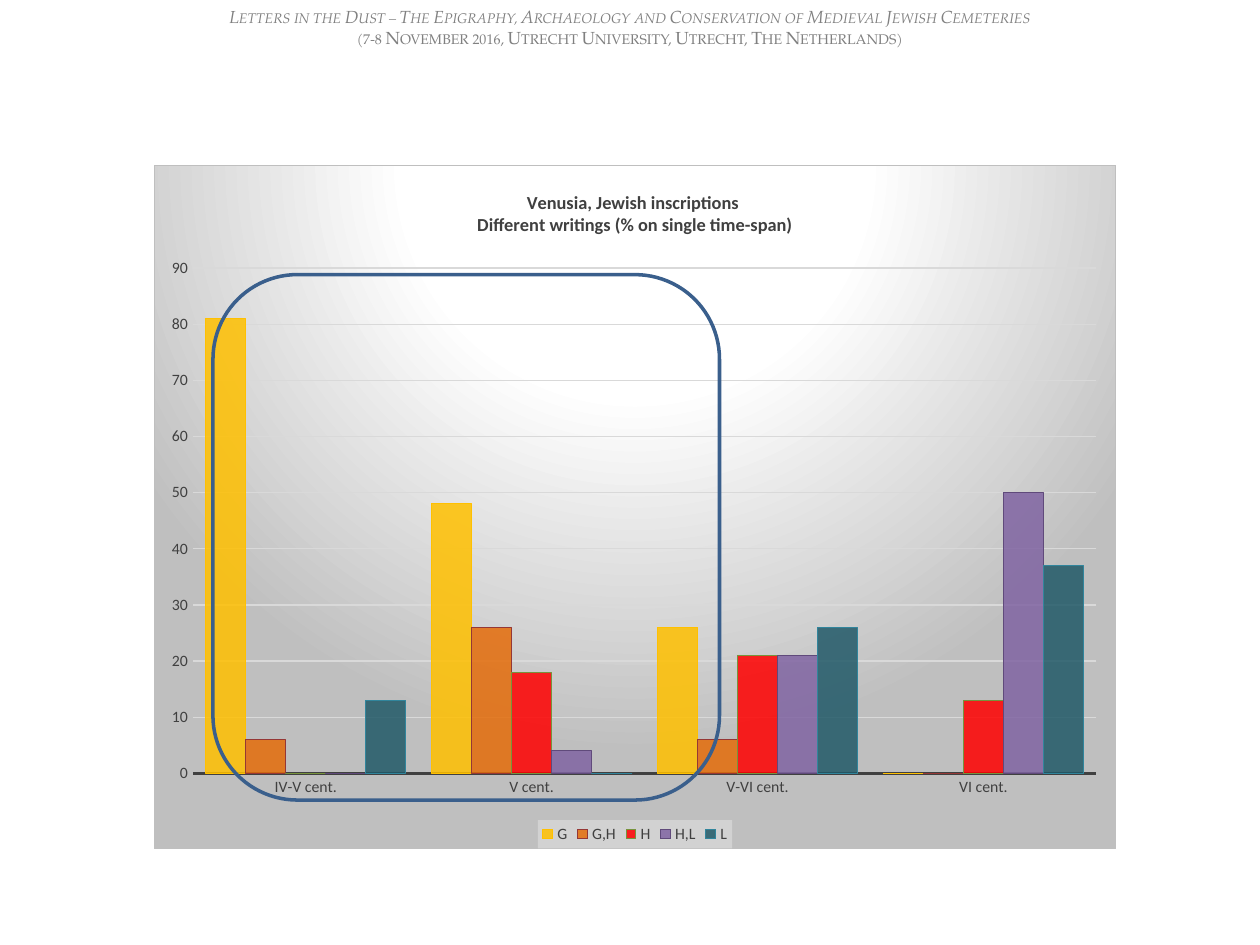
from dataclasses import dataclass

from pptx import Presentation
from pptx import util as u
from pptx.chart import data as cd
from pptx.dml.color import RGBColor
from pptx.enum import chart as ch, shapes, text
from pptx.oxml import parse_xml
from pptx.oxml.ns import nsdecls


@dataclass(frozen=True)
class Theme:
    serif: str = "TeX Gyre Pagella"
    sans: str = "Calibri"
    head: str = "808080"
    ink: str = "404040"
    grid: str = "D9D9D9"
    edge: str = "BFBFBF"
    frame: str = "3A5F8C"
    head_size: float = 10
    title_size: float = 10.5
    label_size: float = 9
    alpha: int = 85


THEME = Theme()

HEADER = [
    ("Letters in the Dust – The Epigraphy, Archaeology and Conservation "
     "of Medieval Jewish Cemeteries", True),
    ("(7-8 November 2016, Utrecht University, Utrecht, The Netherlands)", False),
]
TITLE = ["Venusia, Jewish inscriptions ", "Different writings (% on single time-span)"]
SPANS = ["IV-V cent.", "V cent.", "V-VI cent.", "VI cent."]
# name, values, fill, outline
SCRIPTS = [
    ("G", (81, 48, 26, 0), "FFC000", "FFC000"),
    ("G,H", (6, 26, 6, 0), "E46C0A", "953735"),
    ("H", (0, 18, 21, 13), "FF0000", "77933C"),
    ("H,L", (0, 4, 21, 50), "8064A2", "604A7B"),
    ("L", (13, 0, 26, 37), "215968", "31859C"),
]


def box(*sides):
    return [u.Inches(side) for side in sides]


def set_font(font, size, color, face, bold=False, italic=False):
    font.size, font.name = u.Pt(size), face
    font.bold, font.italic = bold, italic
    font.color.rgb = RGBColor.from_string(color)


def set_label(font):
    set_font(font, THEME.label_size, THEME.ink, THEME.sans)


def set_line(line, color, width):
    line.color.rgb = RGBColor.from_string(color)
    line.width = u.Pt(width)


def add_header(slide):
    frame = slide.shapes.add_textbox(*box(0, 0, 10, 0.44)).text_frame
    frame.word_wrap = True
    frame.auto_size = text.MSO_AUTO_SIZE.SHAPE_TO_FIT_TEXT
    for i, (words, italic) in enumerate(HEADER):
        para = frame.add_paragraph() if i else frame.paragraphs[0]
        para.alignment = text.PP_ALIGN.CENTER
        run = para.add_run()
        run.text = words
        set_font(run.font, THEME.head_size, THEME.head, THEME.serif, italic=italic)
        run.font._element.set("cap", "small")


def set_title(chart):
    frame = chart.chart_title.text_frame
    for i, words in enumerate(TITLE):
        para = frame.add_paragraph() if i else frame.paragraphs[0]
        run = para.add_run()
        run.text = words
        set_font(run.font, THEME.title_size, THEME.ink, THEME.sans, bold=True)
    chart.chart_title.include_in_layout = False


def set_axes(chart):
    for axis in (chart.category_axis, chart.value_axis):
        axis.major_tick_mark = axis.minor_tick_mark = ch.XL_TICK_MARK.NONE
        set_label(axis.tick_labels.font)
    set_line(chart.category_axis.format.line, THEME.ink, 1.5)
    value = chart.value_axis
    value.minimum_scale, value.maximum_scale, value.major_unit = 0, 90, 10
    value.format.line.fill.background()
    set_line(value.major_gridlines.format.line, THEME.grid, 0.75)


def set_bars(chart):
    plot = chart.plots[0]
    plot.gap_width, plot.overlap, plot.vary_by_categories = 65, 0, False
    for bars, (_, _, fill, edge) in zip(plot.series, SCRIPTS):
        bars.invert_if_negative = False
        bars.format.fill.solid()
        bars.format.fill.fore_color.rgb = RGBColor.from_string(fill)
        set_line(bars.format.line, edge, 0.75)
        color = bars._element.xpath("./c:spPr/a:solidFill/a:srgbClr")[0]
        color.append(parse_xml(f'<a:alpha {nsdecls("a")} val="{THEME.alpha * 1000}"/>'))


def set_legend(chart):
    chart.has_legend = True
    legend = chart.legend
    legend.position = ch.XL_LEGEND_POSITION.BOTTOM
    legend.include_in_layout = False
    set_label(legend.font)
    legend._element.find("{*}txPr").addprevious(parse_xml(
        f'<c:spPr {nsdecls("c", "a")}><a:solidFill><a:srgbClr val="F2F2F2">'
        '<a:alpha val="39000"/></a:srgbClr></a:solidFill></c:spPr>'))


def set_ground(chart):
    """Radial gradient and border behind the whole chart."""
    stops = "".join(
        f'<a:gs pos="{pos * 1000}"><a:srgbClr val="{color}"/></a:gs>'
        for pos, color in ((0, "FFFFFF"), (39, "FFFFFF"), (100, THEME.edge)))
    chart._chartSpace.find("{*}chart").addnext(parse_xml(
        f'<c:spPr {nsdecls("c", "a")}><a:gradFill><a:gsLst>{stops}</a:gsLst>'
        '<a:path path="circle"><a:fillToRect l="50000" t="-80000" r="50000" '
        f'b="180000"/></a:path></a:gradFill><a:ln w="{u.Pt(0.75)}"><a:solidFill>'
        f'<a:srgbClr val="{THEME.edge}"/></a:solidFill></a:ln></c:spPr>'))


def set_plot(chart):
    """Fix the inner plot area as shares of the chart."""
    area = chart._chartSpace.find("{*}chart/{*}plotArea")
    for old in area.findall("{*}layout"):
        area.remove(old)
    shares = "".join(f'<c:{key} val="{val}"/>' for key, val in
                     zip("xywh", (0.04, 0.15, 0.94, 0.74)))
    area.insert(0, parse_xml(
        f'<c:layout {nsdecls("c")}><c:manualLayout><c:layoutTarget val="inner"/>'
        f'<c:xMode val="edge"/><c:yMode val="edge"/>{shares}'
        '</c:manualLayout></c:layout>'))


def add_chart(slide):
    data = cd.CategoryChartData()
    data.categories = SPANS
    for name, vals, *_ in SCRIPTS:
        data.add_series(name, vals)
    chart = slide.shapes.add_chart(ch.XL_CHART_TYPE.COLUMN_CLUSTERED,
                                   *box(1.22, 1.31, 7.64, 5.43), data).chart
    set_font(chart.font, 10, "000000", THEME.sans)
    for style in (set_title, set_axes, set_bars, set_legend, set_ground, set_plot):
        style(chart)


def add_frame(slide):
    frame = slide.shapes.add_shape(shapes.MSO_SHAPE.ROUNDED_RECTANGLE,
                                   *box(1.69, 2.18, 4.02, 4.17))
    frame.shadow.inherit = False
    frame.fill.background()
    set_line(frame.line, THEME.frame, 2)


def main():
    deck = Presentation()
    deck.slide_width, deck.slide_height = box(10, 7.5)
    slide = deck.slides.add_slide(deck.slide_layouts[6])
    add_chart(slide)
    add_header(slide)
    add_frame(slide)
    deck.save("out.pptx")


if __name__ == "__main__":
    main()
